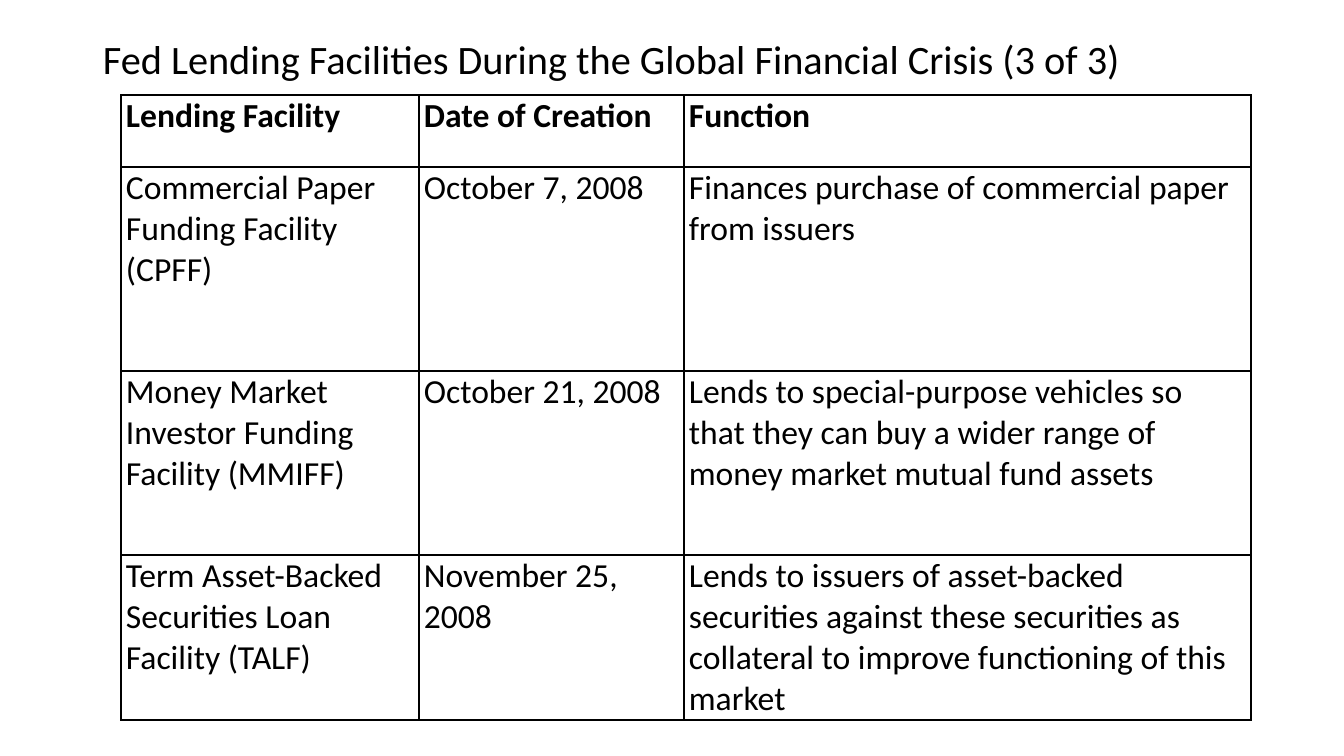
from lxml import etree
from pptx import Presentation
from pptx.dml.color import RGBColor
from pptx.enum import text as txt
from pptx.oxml import ns
from pptx.util import Pt

# Content
TITLE = "Fed Lending Facilities During the Global Financial Crisis (3 of 3)"
FACILITIES = [
    ("Lending Facility", "Date of Creation", "Function"),
    ("Commercial Paper Funding Facility (CPFF)", "October 7, 2008",
     "Finances purchase of commercial paper from issuers"),
    ("Money Market Investor Funding Facility (MMIFF)", "October 21, 2008",
     "Lends to special-purpose vehicles so that they can buy a wider range "
     "of money market mutual fund assets"),
    ("Term Asset-Backed\nSecurities Loan Facility (TALF)", "November 25, 2008",
     "Lends to issuers of asset-backed securities against these securities "
     "as collateral to improve functioning of this market"),
]

# Layout in px
SLIDE_W, SLIDE_H = 1344, 756
TITLE_BOX = (93, 40, 1131, 43)
TABLE_LEFT, TABLE_TOP = 121, 95
COL_WIDTHS = [298, 265, 567]
ROW_HEIGHTS = [72, 204, 184, 165]
BLACK = "000000"


def px(n):
    return round(n * 12192000 / SLIDE_W)


def color(hex_string):
    return RGBColor.from_string(hex_string)


def write(frame, words, size=24, bold=False, spacing=None, margins=None):
    frame.word_wrap = True
    paragraph = frame.paragraphs[0]
    paragraph.text = words
    paragraph.alignment = txt.PP_ALIGN.LEFT
    paragraph.line_spacing = spacing
    for run in paragraph.runs:
        run.font.name = "Calibri"
        run.font.size = Pt(size)
        run.font.bold = bold
        run.font.color.rgb = color(BLACK)


def add_borders(cell, hex_string, points):
    props = cell._tc.get_or_add_tcPr()
    for side in ("lnL", "lnR", "lnT", "lnB"):
        line = etree.SubElement(props, ns.qn(f"a:{side}"), w=str(Pt(points)))
        fill = etree.SubElement(line, ns.qn("a:solidFill"))
        etree.SubElement(fill, ns.qn("a:srgbClr"), val=hex_string)


prs = Presentation()
prs.slide_width, prs.slide_height = px(SLIDE_W), px(SLIDE_H)
slide = prs.slides.add_slide(prs.slide_layouts[6])

# Title
title = slide.shapes.add_textbox(*map(px, TITLE_BOX)).text_frame
title.vertical_anchor = txt.MSO_ANCHOR.MIDDLE
write(title, TITLE, size=28.8, spacing=0.9)

# Table of facilities
table = slide.shapes.add_table(
    len(ROW_HEIGHTS), len(COL_WIDTHS), px(TABLE_LEFT), px(TABLE_TOP),
    px(sum(COL_WIDTHS)), px(sum(ROW_HEIGHTS))).table
table.first_row = table.horz_banding = False
for column, width in zip(table.columns, COL_WIDTHS):
    column.width = px(width)
for row, height in zip(table.rows, ROW_HEIGHTS):
    row.height = px(height)

for r, facility in enumerate(FACILITIES):
    for c, words in enumerate(facility):
        cell = table.cell(r, c)
        cell.margin_left = cell.margin_right = px(5)
        cell.margin_top, cell.margin_bottom = px(1), 0
        cell.vertical_anchor = txt.MSO_ANCHOR.TOP
        add_borders(cell, BLACK, 1)
        cell.fill.background()
        write(cell.text_frame, words, bold=r == 0)

prs.save("out.pptx")
